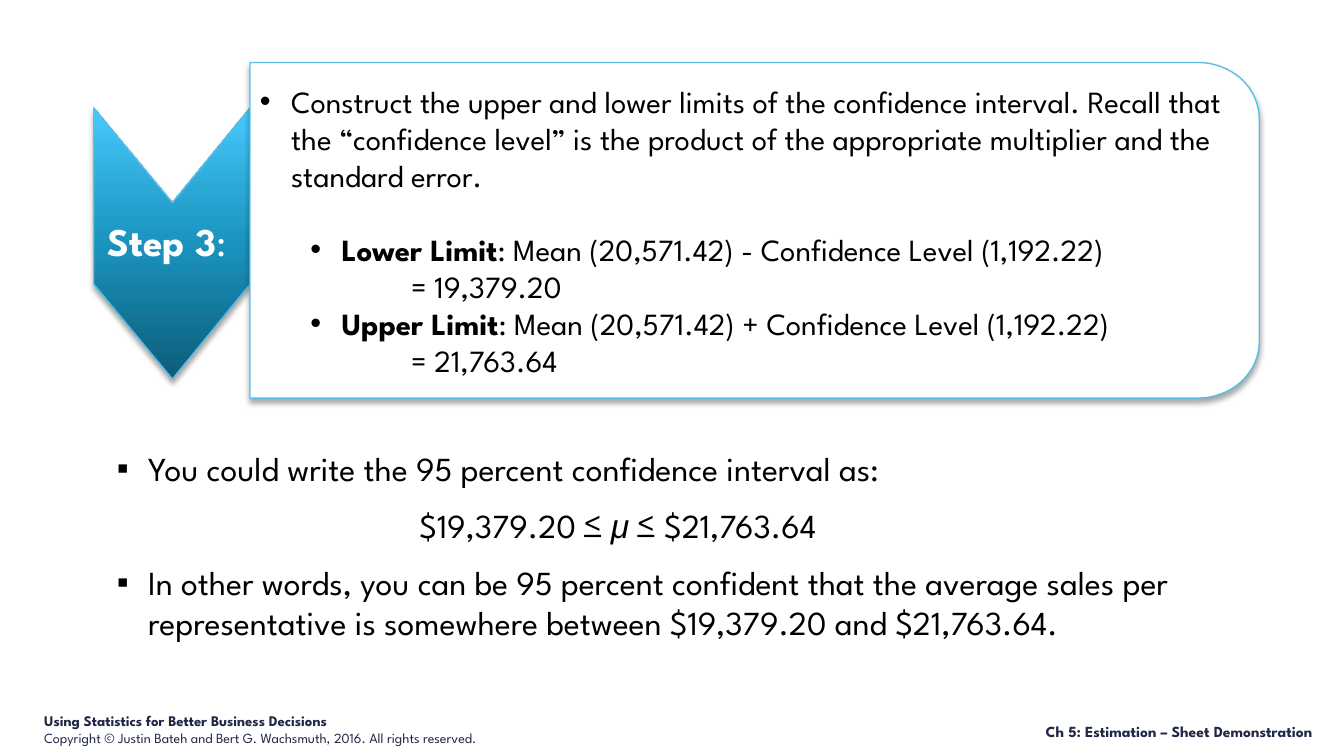
import math

import pptx
import pptx.dml.color
import pptx.enum.text
import pptx.oxml
import pptx.oxml.ns
import pptx.util

PX = 9144
FONT = "League Spartan"
COLORS = {
    "white": "FFFFFF", "black": "000000", "navy": "212745", "edge": "5ABEE6",
    "deep": "0D5C79", "teal": "1A93BE", "sky": "2CA8D6", "bright": "46CBFF",
}
Pt = pptx.util.Pt
ALIGN = pptx.enum.text.PP_ALIGN
ANCHOR = pptx.enum.text.MSO_ANCHOR
qn = pptx.oxml.ns.qn
NS = pptx.oxml.ns.nsdecls("a")


def rgb(name):
    return pptx.dml.color.RGBColor.from_string(COLORS[name])


def write(tf, frame, base, paras):
    settings = {"word_wrap": True, "auto_size": pptx.enum.text.MSO_AUTO_SIZE.NONE, **frame}
    for key, value in settings.items():
        setattr(tf, key, value)
    for i, (fmt, left, bullet, runs) in enumerate(paras):
        p = tf.add_paragraph() if i else tf.paragraphs[0]
        for key, value in {"alignment": ALIGN.LEFT, "space_before": Pt(0), "space_after": Pt(0), **fmt}.items():
            setattr(p, key, value)
        pPr = p._p.get_or_add_pPr()
        pPr.set("marL", str(left * PX))
        pPr.set("indent", str(-31 * PX if bullet else 0))
        if bullet:
            pPr.append(pptx.oxml.parse_xml(f'<a:buFont {NS} typeface="Arial"/>'))
            pPr.append(pptx.oxml.parse_xml(f'<a:buChar {NS} char="{bullet}"/>'))
        else:
            pPr.append(pptx.oxml.parse_xml(f"<a:buNone {NS}/>"))
        for text, font in runs:
            r = p.add_run()
            r.text = text
            style = {"name": FONT, "bold": False, **base, **font}
            r.font.color.rgb = rgb(style.pop("color"))
            for key, value in style.items():
                setattr(r.font, key, value)


prs = pptx.Presentation()
prs.slide_width, prs.slide_height = 1333 * PX, 750 * PX
s = prs.slides.add_slide(prs.slide_layouts[1])
title = s.shapes.title
title._element.getparent().remove(title._element)
bold = {"bold": True}

chevron = [(248, 107), (248, 282), (171, 376), (93, 282), (93, 107), (171, 201)]
card = [(248, 62)]
rx, ry, steps = 61, 56, 16
for cx, cy, start in ((1188, 118, -90), (1188, 339, 0)):
    for i in range(steps + 1):
        angle = math.radians(start + 90 * i / steps)
        card.append((cx + rx * math.cos(angle), cy + ry * math.sin(angle)))
card.append((248, 395))

panels = []
for points in (chevron, card):
    outline = [(round(x * PX), round(y * PX)) for x, y in points]
    builder = s.shapes.build_freeform(*outline[0], scale=1.0)
    builder.add_line_segments(outline[1:], close=True)
    sp = builder.convert_to_shape()
    sp.line.color.rgb = rgb("edge")
    sp.line.width = Pt(1)
    sp.shadow.inherit = False
    sp._element.spPr.find(qn("a:effectLst")).append(pptx.oxml.parse_xml(
        f'<a:outerShdw {NS} blurRad="{Pt(4)}" dist="{Pt(3)}" dir="5400000" rotWithShape="0">'
        '<a:srgbClr val="000000"><a:alpha val="35000"/></a:srgbClr></a:outerShdw>'))
    panels.append(sp)
step, limits = panels

step.fill.gradient()
step.fill.gradient_angle = 90
stops = step._element.spPr.find(qn("a:gradFill")).find(qn("a:gsLst"))
for stop in list(stops):
    stops.remove(stop)
for pos, name in ((0, "deep"), (50, "teal"), (70, "sky"), (100, "bright")):
    stops.append(pptx.oxml.parse_xml(
        f'<a:gs {NS} pos="{pos * 1000}"><a:srgbClr val="{COLORS[name]}"/></a:gs>'))

limits.fill.solid()
limits.fill.fore_color.rgb = rgb("white")

write(step.text_frame,
      {"vertical_anchor": ANCHOR.MIDDLE, "margin_left": 3 * PX, "margin_right": 3 * PX},
      {"size": Pt(28), "color": "white"},
      [({"alignment": ALIGN.CENTER, "line_spacing": 0.9}, 0, None, [("Step 3", bold), (": ", {})])])

paras = [({}, 31, "•", [(
    "Construct the upper and lower limits of the confidence interval. Recall that the “confidence level” "
    "is the product of the appropriate multiplier and the standard error.", {})])]
for name, sign, value, gap in (("Lower", "-", "19,379.20", 26.4), ("Upper", "+", "21,763.64", 0)):
    paras.append(({"space_before": Pt(gap)}, 81, "•", [
        (f"{name} Limit", bold), (f": Mean (20,571.42) {sign} Confidence Level (1,192.22)", {})]))
    paras.append(({}, 150, None, [(f"= {value}", {})]))
write(limits.text_frame,
      {"vertical_anchor": ANCHOR.TOP, "margin_left": 10 * PX, "margin_right": 10 * PX, "margin_top": 20 * PX},
      {"size": Pt(22), "color": "black"}, paras)

body = s.placeholders[1]
for key, value in {"left": 106, "top": 439, "width": 1165, "height": 246}.items():
    setattr(body, key, value * PX)
gaps = {"space_before": Pt(6), "space_after": Pt(6)}
write(body.text_frame, {"vertical_anchor": ANCHOR.TOP}, {"size": Pt(24), "color": "black"}, [
    (gaps, 31, "▪", [("You could write the 95 percent confidence interval as:", {})]),
    (gaps, 300, None, [("$19,379.20 ≤ ", {}), ("μ", {"name": "Arial", "italic": True}),
                       (" ≤ $21,763.64", {})]),
    (gaps, 31, "▪", [("In other words, you can be 95 percent confident that the average sales per "
                      "representative is somewhere between $19,379.20 and $21,763.64.", {})]),
])

footers = [
    ((34, 701, 528, 40), ANCHOR.TOP, [
        ({}, 0, None, [("Using Statistics for Better Business Decisions", {"size": Pt(10.5), "bold": True})]),
        ({"space_after": Pt(1)}, 0, None, [
            ("Copyright © Justin Bateh and Bert G. Wachsmuth, 2016. All rights reserved.", {"size": Pt(10)})]),
    ]),
    ((650, 711, 662, 29), ANCHOR.BOTTOM, [
        ({"alignment": ALIGN.RIGHT}, 0, None, [
            ("Ch 5: Estimation – Sheet Demonstration", {"size": Pt(11), "bold": True})]),
    ]),
]
for box, anchor, paras in footers:
    tb = s.shapes.add_textbox(*(v * PX for v in box))
    write(tb.text_frame, {"vertical_anchor": anchor}, {"color": "navy"}, paras)

prs.save("out.pptx")
